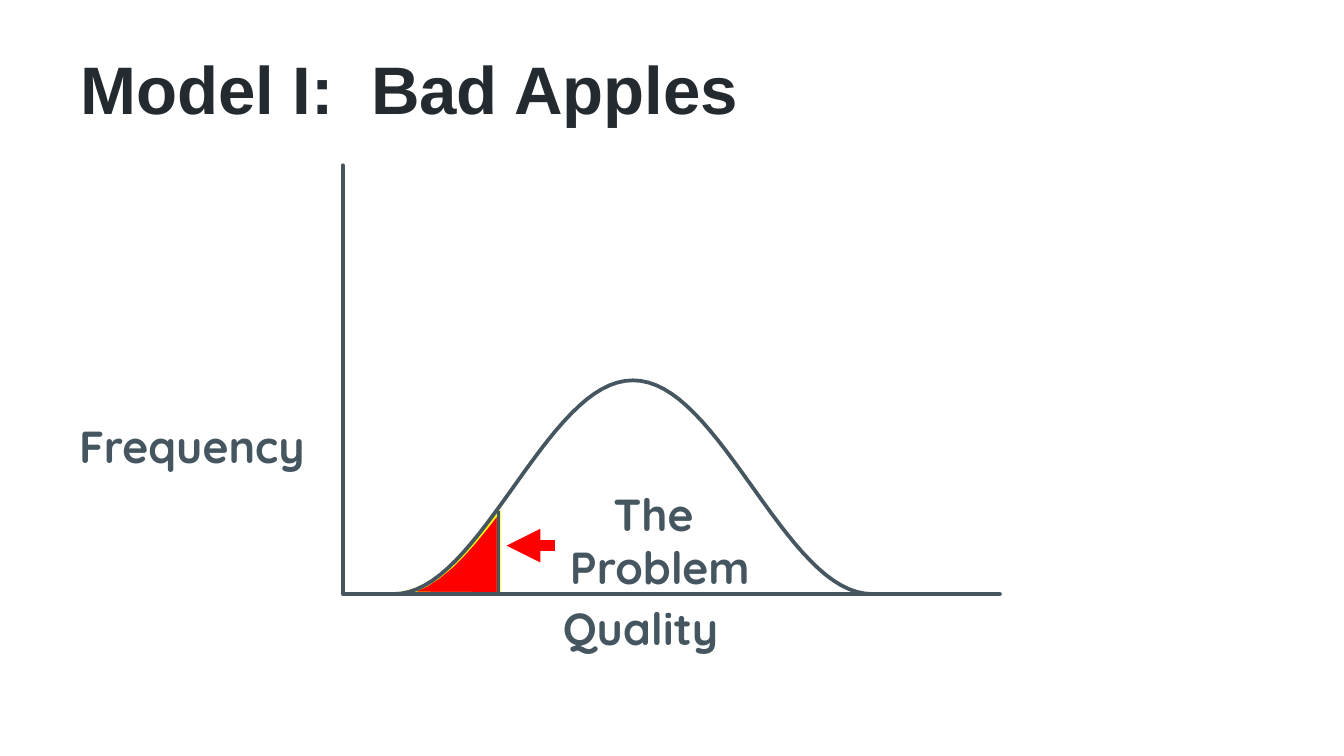
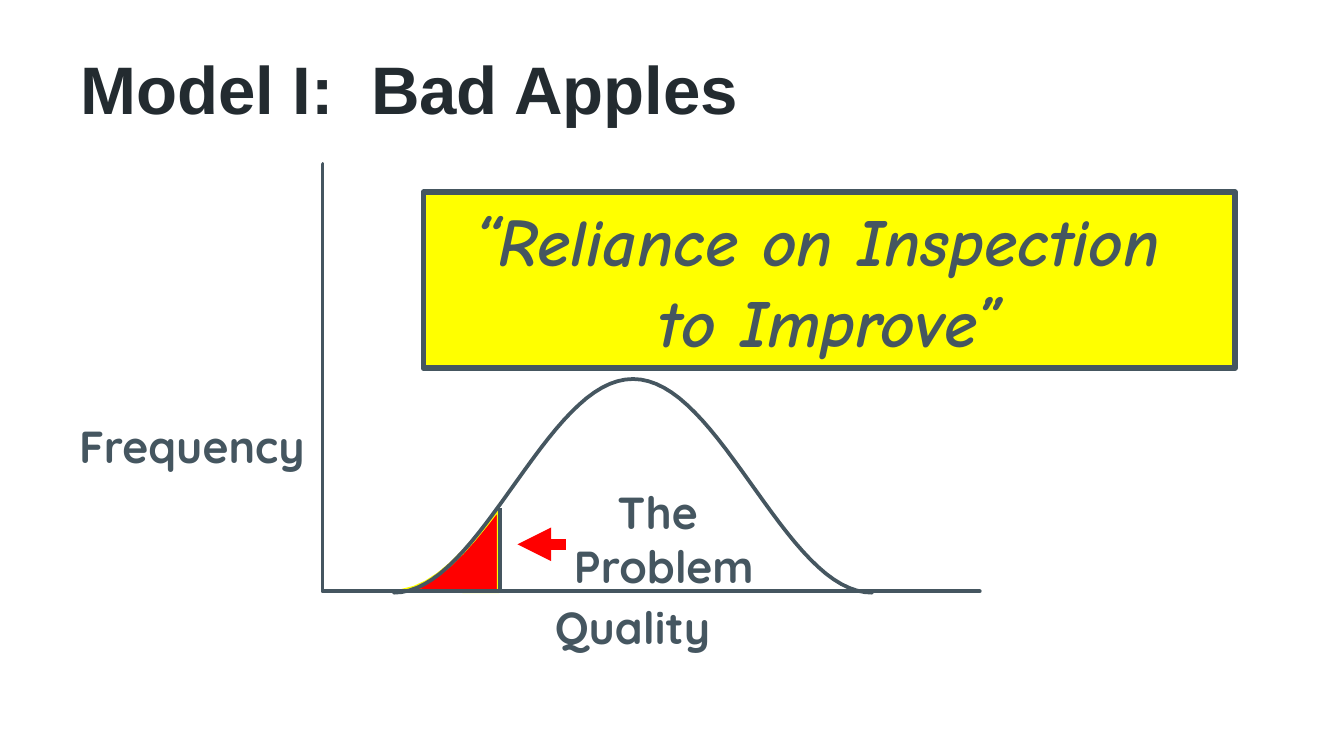
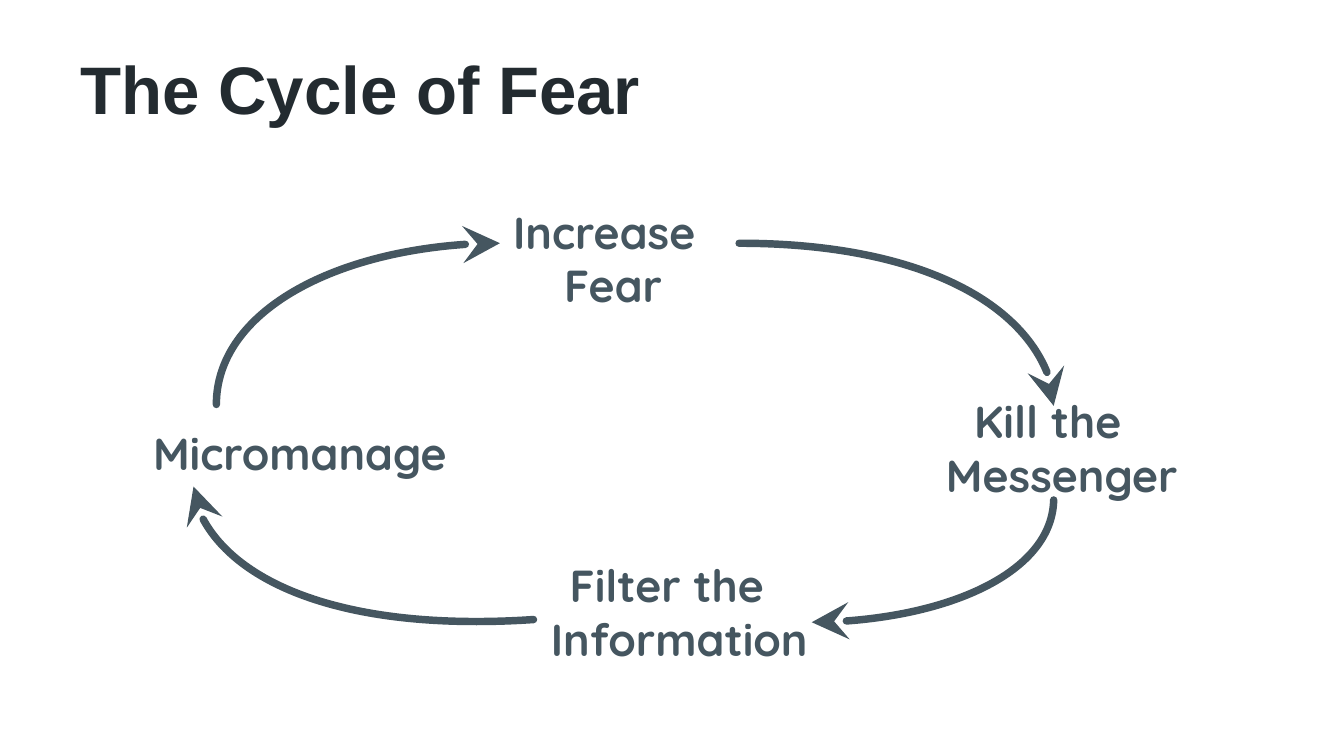
from math import cos, pi

from lxml.etree import SubElement
from pptx import Presentation
from pptx.dml.color import RGBColor
from pptx.enum.shapes import MSO_CONNECTOR, MSO_SHAPE
from pptx.enum.text import MSO_ANCHOR, MSO_AUTO_SIZE, PP_ALIGN
from pptx.oxml.ns import qn
from pptx.util import Inches, Pt

INK = RGBColor(0x23, 0x2B, 0x30)
SLATE = RGBColor(0x45, 0x56, 0x60)
RED = RGBColor(0xFF, 0x00, 0x00)
YELLOW = RGBColor(0xFF, 0xFF, 0x00)
TITLE_FONT, LABEL_FONT, QUOTE_FONT = "Arial", "Quicksand", "Comic Neue"
BELL_WIDTH, BELL_HEIGHT, BELL_STEPS = 3.56, 1.59, 62
TAIL_START, TAIL_END, TAIL_STEPS, TAIL_SCALE = 0.06, 0.78, 8, 0.96


def write(shape, text, font=LABEL_FONT, size=24, color=SLATE, italic=False,
          align=PP_ALIGN.LEFT, anchor=MSO_ANCHOR.TOP, wrap=False, indents=()):
    """Fill a shape with bold text, one paragraph for each line."""
    frame = shape.text_frame
    frame.word_wrap = wrap
    frame.auto_size = MSO_AUTO_SIZE.NONE if wrap else MSO_AUTO_SIZE.SHAPE_TO_FIT_TEXT
    frame.vertical_anchor = anchor
    for number, line in enumerate(text.split("\n")):
        para = frame.add_paragraph() if number else frame.paragraphs[0]
        para.alignment = align
        if number < len(indents):
            para._p.get_or_add_pPr().set("marL", str(Inches(indents[number])))
        span = para.add_run()
        span.text = line
        span.font.name = font
        span.font.size = Pt(size)
        span.font.bold = True
        span.font.italic = italic
        span.font.color.rgb = color


def add_label(page, box, text, **style):
    """Add a text box at the given left, top, width and height."""
    write(page.shapes.add_textbox(*map(Inches, box)), text, **style)


def style_line(shape, color, width, **ends):
    """Set line colour, width and arrowheads."""
    shape.line.color.rgb = color
    shape.line.width = Pt(width)
    for tag, (kind, size) in ends.items():
        SubElement(shape.line._get_or_add_ln(), qn(f"a:{tag}"), type=kind, w=size, len=size)


def add_outline(page, points, color=SLATE, width=2, fill=None, **ends):
    """Draw a freeform through the points, closed if it is filled."""
    corners = [(Inches(x), Inches(y)) for x, y in points]
    builder = page.shapes.build_freeform(*corners[0])
    builder.add_line_segments(corners[1:], close=fill is not None)
    shape = builder.convert_to_shape()
    shape.shadow.inherit = False
    if fill is None:
        shape.fill.background()
    else:
        shape.fill.solid()
        shape.fill.fore_color.rgb = fill
    style_line(shape, color, width, **ends)
    shape.line._get_or_add_ln().set("cap", "rnd")
    return shape


def add_curved_arrow(page, points):
    """Draw a Bezier arrow from a start, two control points and an end."""
    shape = add_outline(page, points, width=4, tailEnd=("stealth", "lg"))
    lines = list(shape._element.iter(qn("a:lnTo")))
    outline = lines[0].getparent()
    curve = SubElement(outline, qn("a:cubicBezTo"))
    for line in lines:
        curve.append(line[0])
        outline.remove(line)


def add_straight(page, start, end, color, width, **ends):
    """Draw a straight connector."""
    line = page.shapes.add_connector(MSO_CONNECTOR.STRAIGHT, *map(Inches, start + end))
    style_line(line, color, width, **ends)
    SubElement(line._element.spPr, qn("a:effectLst"))


def add_page(deck, title):
    """Add a blank slide with the shared title."""
    page = deck.slides.add_slide(deck.slide_layouts[6])
    add_label(page, (0.5, 0.34, 9, 0.62), title, font=TITLE_FONT, size=36,
              color=INK, anchor=MSO_ANCHOR.MIDDLE, wrap=True)
    return page


def bell_points(left, base, start, end, steps, scale=1):
    """Return points of a raised cosine between two offsets from its left."""
    offsets = [start + (end - start) * step / steps for step in range(steps + 1)]
    return [(left + x, base - scale * BELL_HEIGHT * (1 - cos(2 * pi * x / BELL_WIDTH)) / 2)
            for x in offsets]


def add_distribution(page, box, bell_left, bell_base, cut, arrow_left, problem_left, quality_left):
    """Draw the quality distribution with its bad tail on axes filling the box."""
    left, top, width, height = box
    base = top + height
    add_label(page, (problem_left, bell_base - 0.85, 1.56, 0.91), "The \nProblem",
              align=PP_ALIGN.CENTER)
    add_label(page, (quality_left, bell_base, 1.37, 0.5), "Quality")
    add_label(page, (left - 2.06 if left > 2.5 else left - 1.91, 3.07, 1.92, 0.5), "Frequency")
    tail = bell_points(bell_left, base, TAIL_START, TAIL_END, TAIL_STEPS, TAIL_SCALE)
    add_outline(page, tail + [(bell_left + TAIL_END, base)], color=YELLOW, fill=RED)
    add_outline(page, bell_points(bell_left, bell_base, 0, BELL_WIDTH, BELL_STEPS))
    add_outline(page, [(left, top), (left, base), (left + width, base)])
    add_straight(page, (cut, base - 0.62), (cut, base - 0.01), SLATE, 2)
    add_straight(page, (arrow_left, bell_base - 0.36), (arrow_left + 0.36, bell_base - 0.36),
                 RED, 6, headEnd=("triangle", "med"))


def add_banner(page, box, text):
    """Add the yellow quotation banner."""
    banner = page.shapes.add_shape(MSO_SHAPE.RECTANGLE, *map(Inches, box))
    banner.shadow.inherit = False
    banner.fill.solid()
    banner.fill.fore_color.rgb = YELLOW
    style_line(banner, SLATE, 3)
    write(banner, text, font=QUOTE_FONT, size=36, italic=True,
          align=PP_ALIGN.CENTER, anchor=MSO_ANCHOR.MIDDLE)


def add_cycle(page, box):
    """Place the four stages and the arrows between them from the box corner."""
    left, top = box
    stages = [
        ("Increase\nFear", (2.68, 0, 1.63, 0.91), (0, 0.38), False),
        ("Kill the\nMessenger", (5.9, 1.41, 2.02, 0.91), (0.21, 0), False),
        ("Filter the\nInformation", (2.96, 2.63, 2.16, 0.91), (0.14, 0), True),
        ("Micromanage", (0, 1.65, 2.41, 0.5), (), False),
    ]
    arrows = [
        [(0.57, 1.54), (0.57, 0.88), (1.51, 0.34), (2.68, 0.34)],
        [(4.46, 0.34), (5.75, 0.34), (6.8, 0.88), (6.8, 1.55)],
        [(6.8, 2.25), (6.79, 2.75), (5.99, 3.16), (5, 3.16)],
        [(2.93, 3.14), (1.58, 3.23), (0.44, 2.79), (0.4, 2.15)],
    ]
    for text, (x, y, width, height), indents, wrap in stages:
        add_label(page, (left + x, top + y, width, height), text, indents=indents, wrap=wrap)
    for points in arrows:
        add_curved_arrow(page, [(left + x, top + y) for x, y in points])


def main():
    """Build and save the deck."""
    deck = Presentation()
    deck.slide_width = Inches(10)
    deck.slide_height = deck.slide_width * 9 // 16

    page = add_page(deck, "Model I:  Bad Apples")
    add_distribution(page, (2.55, 1.23, 4.89, 3.19), bell_left=2.93, bell_base=4.42, cut=3.71,
                     arrow_left=3.77, problem_left=4.13, quality_left=4.09)

    page = add_page(deck, "Model I:  Bad Apples")
    add_distribution(page, (2.4, 1.22, 4.89, 3.18), bell_left=2.93, bell_base=4.41, cut=3.72,
                     arrow_left=3.85, problem_left=4.16, quality_left=4.03)
    add_banner(page, (3.15, 1.43, 6.04, 1.31), "“Reliance on Inspection \nto Improve”")

    page = add_page(deck, "The Cycle of Fear")
    add_cycle(page, (1.04, 1.47))

    deck.save("out.pptx")


if __name__ == "__main__":
    main()
